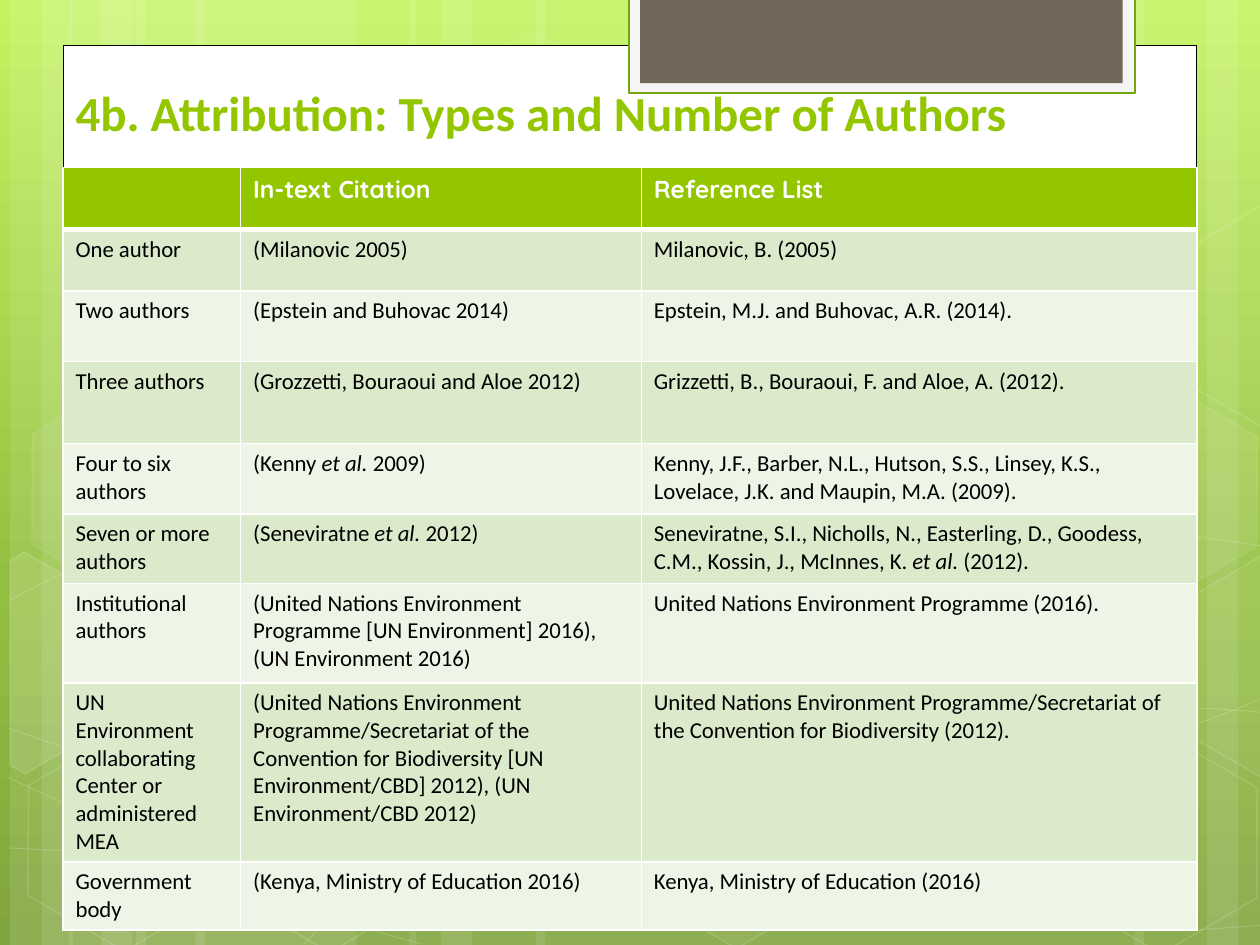
from math import cos, radians, sin

from lxml.etree import SubElement
from pptx import Presentation
from pptx.dml.color import RGBColor
from pptx.enum.shapes import MSO_SHAPE
from pptx.enum.text import MSO_ANCHOR, PP_ALIGN
from pptx.oxml import parse_xml
from pptx.oxml.ns import nsdecls, qn
from pptx.util import Inches, Pt

COLORS = {"white": "FFFFFF", "black": "000000", "green": "94C600", "band": "DCEACC",
          "pale": "EEF5E7", "tab": "F5F5F5", "tab_line": "74A510", "taupe": "71685A"}
BACKGROUND = [(0, "C3F35F"), (62, "93BF3F"), (100, "81A53E")]  # percent, colour

TITLE = "4b. Attribution: Types and Number of Authors"
HEADER = ["", "In-text Citation", "Reference List"]
ET_AL = "et al."  # set in italics wherever it occurs
ROWS = [
    ("One author", "(Milanovic 2005)", "Milanovic, B. (2005)"),
    ("Two authors", "(Epstein and Buhovac 2014)", "Epstein, M.J. and Buhovac, A.R. (2014)."),
    ("Three authors", "(Grozzetti, Bouraoui and Aloe 2012)",
     "Grizzetti, B., Bouraoui, F. and Aloe, A. (2012)."),
    ("Four to six authors", "(Kenny et al. 2009)",
     "Kenny, J.F., Barber, N.L., Hutson, S.S., Linsey, K.S., Lovelace, J.K. "
     "and Maupin, M.A. (2009)."),
    ("Seven or more authors", "(Seneviratne et al. 2012)",
     "Seneviratne, S.I., Nicholls, N., Easterling, D., Goodess, C.M., Kossin, J., "
     "McInnes, K. et al. (2012)."),
    ("Institutional authors",
     "(United Nations Environment Programme [UN Environment] 2016), (UN Environment 2016)",
     "United Nations Environment Programme (2016)."),
    ("UN Environment collaborating Center or administered MEA",
     "(United Nations Environment Programme/Secretariat of the Convention for Biodiversity "
     "[UN Environment/CBD] 2012), (UN Environment/CBD 2012)",
     "United Nations Environment Programme/Secretariat of the Convention for Biodiversity (2012)."),
    ("Government body", "(Kenya, Ministry of Education 2016)",
     "Kenya, Ministry of Education (2016)"),
]
COLUMN_WIDTHS = [1.41, 3.18, 4.41]
ROW_HEIGHTS = [0.49, 0.49, 0.56, 0.65, 0.56, 0.55, 0.79, 1.33, 0.54]

# Background decoration: left and width of stripes; left, top, fill and line opacity of hexagons
STRIPES = [(1.08, 1.75), (0.08, 0.5), (0.33, 0.83), (1.55, 1.75), (0.55, 0.5), (0.8, 0.83),
           (7.33, 1.75), (9.58, 0.5), (9, 0.83), (4.25, 3.08), (3.25, 0.5), (3.5, 0.83)]
HEXAGONS = [(3.34, 0.36, 4, 8), (4.97, 5.89, 6, 12), (0.11, 5.91, 0, 12), (0.14, 3.12, 7, 8),
            (1.74, 5.92, 0, 12), (7.53, 4.53, 10, 12), (8.34, 5.93, 0, 12), (8.34, 3.14, 7, 8)]
TILT = 30
# Hexagons cut by the slide edge: centre, corners as they stand on the slide, fill opacity
CUT_HEXAGONS = [
    ((0.36, 5.35), [(0.08, 4.45), (0.19, 4.38), (0.96, 4.82), (0.95, 5.7), (0.2, 6.14),
                    (0.08, 6.07)], 10),
    ((9.85, 5.2), [(9.26, 4.85), (10.01, 4.41), (10.09, 4.46), (10.09, 6.13), (10.02, 6.17),
                   (9.26, 5.73)], 4),
    ((9.85, 2.41), [(9.26, 2.07), (10.01, 1.63), (10.1, 1.68), (10.09, 3.35), (10.02, 3.39),
                    (9.26, 2.95)], 0),
]
# Bezier chains: a start, then two control points and an end for each piece
WAVES = [
    [(0.07, 6.73), (0.61, 6.76), (1.15, 6.79), (1.9, 6.78), (2.65, 6.77), (3.58, 6.75),
     (4.58, 6.65), (5.58, 6.55), (7, 6.36), (7.92, 6.17), (8.83, 5.98), (9.77, 5.68), (10.07, 5.51)],
    [(0.07, 4.77), (0.36, 4.61), (0.65, 4.46), (1.21, 4.31), (1.78, 4.16), (2.59, 3.94),
     (3.47, 3.87), (4.36, 3.8), (5.44, 3.79), (6.54, 3.87), (7.64, 3.95), (9.47, 4.26), (10.07, 4.34)],
    [(0.06, 6.17), (1.27, 6.72), (2.47, 7.27), (3.34, 7.49)],
    [(0.07, 5.78), (0.38, 5.89), (0.7, 6), (1.28, 6.16), (1.86, 6.31), (2.73, 6.56), (3.57, 6.73),
     (4.4, 6.9), (5.45, 7.08), (6.28, 7.18), (7.11, 7.29), (8, 7.33), (8.53, 7.36),
     (9.05, 7.4), (9.19, 7.38), (9.45, 7.38), (9.71, 7.37), (9.89, 7.35), (10.07, 7.34)],
    [(2.42, 7.49), (2.6, 7.29), (2.78, 7.09), (3.02, 6.91), (3.26, 6.73), (3.6, 6.53), (3.88, 6.39),
     (4.16, 6.25), (4.33, 6.19), (4.7, 6.09), (5.06, 5.99), (5.73, 5.85), (6.08, 5.78),
     (6.44, 5.71), (6.49, 5.71), (6.8, 5.69), (7.11, 5.66), (7.6, 5.63), (7.94, 5.62),
     (8.29, 5.61), (8.86, 5.62), (8.86, 5.62), (9.08, 5.62), (9.31, 5.62), (9.53, 5.62),
     (9.71, 5.63), (9.88, 5.64), (9.97, 5.65), (10.06, 5.66), (10.03, 5.65), (10.06, 5.66)],
]


def rgb(name):
    return RGBColor.from_string(COLORS[name])


def paint(target, color, opacity=100):
    target.solid()
    target.fore_color.rgb = rgb(color)
    if opacity < 100:
        for clr in target._xPr.iter("{*}srgbClr"):
            SubElement(clr, qn("a:alpha"), val=str(opacity * 1000))


def style(shape, fill=None, opacity=100, line=None, weight=1, line_opacity=100):
    shape.shadow.inherit = False
    if fill and opacity:
        paint(shape.fill, fill, opacity)
    else:
        shape.fill.background()
    if line:
        shape.line.width = Pt(weight)
        paint(shape.line.fill, line, line_opacity)
    else:
        shape.line.fill.background()


def add_box(slide, kind, left, top, width, height, **look):
    box = slide.shapes.add_shape(kind, *map(Inches, (left, top, width, height)))
    style(box, **look)
    return box


def add_outline(slide, points, closed, **look):
    start, *rest = [(Inches(x), Inches(y)) for x, y in points]
    builder = slide.shapes.build_freeform(*start)
    builder.add_line_segments(rest, close=closed)
    outline = builder.convert_to_shape()
    style(outline, **look)
    return outline


def bend(outline):
    """Turn each three straight segments into one Bezier curve."""
    segments = list(outline._element.iter(qn("a:lnTo")))
    for i in range(0, len(segments), 3):
        first, *others = segments[i:i + 3]
        curve = SubElement(first.getparent(), qn("a:cubicBezTo"))
        for segment in (first, *others):
            curve.append(segment[0])
            segment.getparent().remove(segment)


def untilt(point, centre):
    dx, dy = point[0] - centre[0], point[1] - centre[1]
    c, s = cos(radians(TILT)), sin(radians(TILT))
    return centre[0] + dx * c + dy * s, centre[1] - dx * s + dy * c


def set_font(paragraph, face, size, color, bold):
    font = paragraph.font
    font.name, font.size, font.bold = face, Pt(size), bold
    font.color.rgb = rgb(color)


def border_cell(cell, weights):
    props = cell._tc.get_or_add_tcPr()
    for i, (side, weight) in enumerate(weights.items()):
        props.insert(i, parse_xml(
            f'<a:{side} {nsdecls("a")} w="{Pt(weight)}"><a:solidFill>'
            f'<a:srgbClr val="{COLORS["white"]}"/></a:solidFill></a:{side}>'))


def add_background(slide):
    stops = "".join(f'<a:gs pos="{pos * 1000}"><a:srgbClr val="{color}"/></a:gs>'
                    for pos, color in BACKGROUND)
    slide._element.cSld.insert(0, parse_xml(
        f'<p:bg {nsdecls("p", "a")}><p:bgPr><a:gradFill><a:gsLst>{stops}</a:gsLst>'
        '<a:lin ang="5400000" scaled="0"/></a:gradFill><a:effectLst/></p:bgPr></p:bg>'))
    for left, width in STRIPES:
        add_box(slide, MSO_SHAPE.RECTANGLE, left, 0, width, 7.5, fill="white", opacity=10)
    for chain in WAVES:
        bend(add_outline(slide, chain, False, line="white", weight=0.5, line_opacity=20))
    for left, top, opacity, line_opacity in HEXAGONS:
        hexagon = add_box(slide, MSO_SHAPE.HEXAGON, left, top, 1.75, 1.52, fill="white",
                          opacity=opacity, line="white", line_opacity=line_opacity)
        hexagon.adjustments[0] = 0.285
        hexagon.rotation = TILT
    for centre, corners, opacity in CUT_HEXAGONS:
        upright = [untilt(corner, centre) for corner in corners]
        add_outline(slide, upright, True, fill="white", opacity=opacity,
                    line="white", line_opacity=12).rotation = TILT


def add_citation_table(slide):
    table = slide.shapes.add_table(
        len(ROWS) + 1, len(HEADER), Inches(0.5), Inches(1.33),
        Inches(sum(COLUMN_WIDTHS)), Inches(sum(ROW_HEIGHTS))).table
    for column, width in zip(table.columns, COLUMN_WIDTHS):
        column.width = Inches(width)
    for r, (row, height, texts) in enumerate(zip(table.rows, ROW_HEIGHTS, [HEADER, *ROWS])):
        row.height = Inches(height)
        look = ("Calibri", 13, "black", False) if r else ("Quicksand", 14, "white", True)
        for cell, text in zip(row.cells, texts):
            paint(cell.fill, "green" if r == 0 else "band" if r % 2 else "pale")
            border_cell(cell, {"lnL": 1, "lnR": 1, "lnT": 3 if r == 1 else 1,
                               "lnB": 3 if r == 0 else 1})
            paragraph = cell.text_frame.paragraphs[0]
            set_font(paragraph, *look)
            for part in filter(None, text.partition(ET_AL)):
                run = paragraph.add_run()
                run.text = part
                if part == ET_AL:
                    run.font.italic = True


# Slide: background, white panel, tab at the top edge, table, title in front
deck = Presentation()
deck.slide_width, deck.slide_height = Inches(10), Inches(7.5)
slide = deck.slides.add_slide(deck.slide_layouts[5])
add_background(slide)
add_box(slide, MSO_SHAPE.RECTANGLE, 0.5, 0.36, 9, 6.76, fill="white", line="black", weight=0.5)
add_box(slide, MSO_SHAPE.RECTANGLE, 4.99, -0.02, 4.02, 0.76, fill="tab", line="tab_line", weight=1.25)
add_box(slide, MSO_SHAPE.RECTANGLE, 5.08, -0.02, 3.83, 0.68, fill="taupe")
add_citation_table(slide)

title = slide.shapes.title
title.left, title.top, title.width, title.height = map(Inches, (0.5, 0.42, 8.92, 0.75))
title.text_frame.text = TITLE
title.text_frame.vertical_anchor = MSO_ANCHOR.BOTTOM
heading = title.text_frame.paragraphs[0]
heading.alignment = PP_ALIGN.LEFT
set_font(heading, "Calibri", 28, "green", True)
slide.shapes._spTree.append(title._element)
deck.save("out.pptx")
